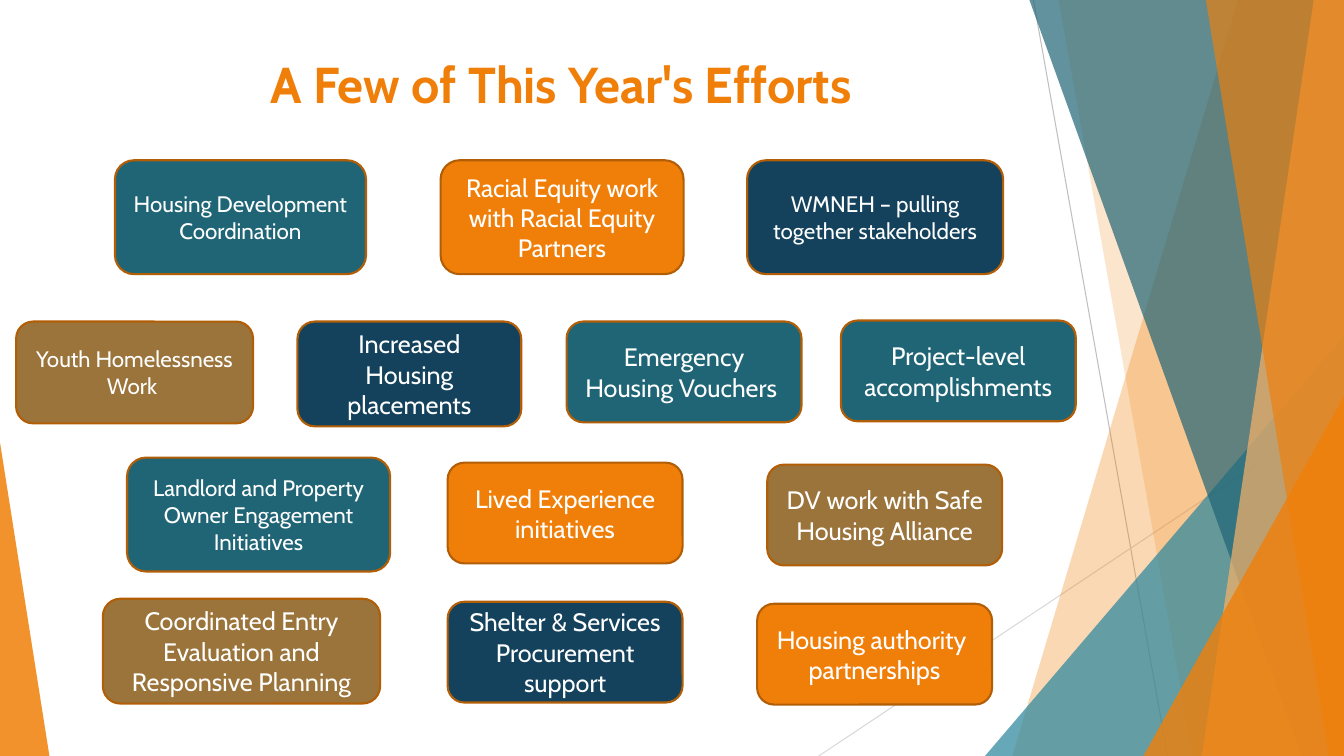
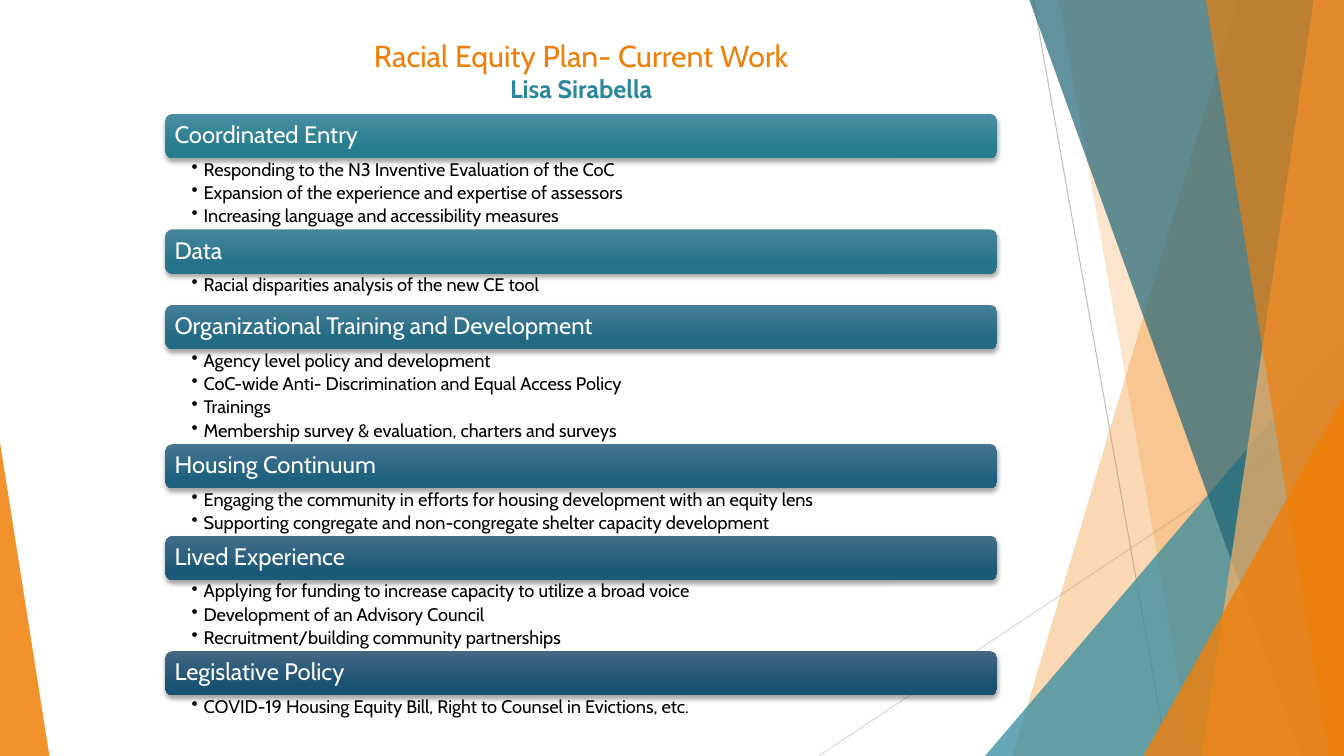
import pptx
import pptx.dml.color
import pptx.enum.shapes
import pptx.enum.text
import pptx.oxml
import pptx.oxml.ns
import pptx.util

Inches = pptx.util.Inches
Pt = pptx.util.Pt
SHAPE = pptx.enum.shapes.MSO_SHAPE
ANCHOR = pptx.enum.text.MSO_ANCHOR
ALIGN = pptx.enum.text.PP_ALIGN

WIDTH, HEIGHT = 13.33, 7.5
ORANGE, TEAL, DEEP_TEAL = "F07F09", "2B879D", "206576"
NAVY, BROWN, PEACH, RUST = "14425D", "9A743A", "F9B268", "B25E07"
WHITE, BLACK = "FFFFFF", "000000"


def rgb(value):
    return pptx.dml.color.RGBColor.from_string(value)


def xml(tag, attributes="", inner=""):
    namespace = pptx.oxml.ns.nsdecls("a")
    return pptx.oxml.parse_xml(f"<a:{tag} {namespace} {attributes}>{inner}</a:{tag}>")


class Deck:
    font = "Cabin"

    def __init__(self):
        self.presentation = pptx.Presentation()
        self.presentation.slide_width = Inches(WIDTH)
        self.presentation.slide_height = Inches(HEIGHT)
        self.slide = None

    def new_slide(self):
        self.slide = self.presentation.slides.add_slide(self.presentation.slide_layouts[6])
        self.line((10.25, 0), (11.58, HEIGHT), "BFBFBF")
        self.line((WIDTH, 4.03), (8.12, HEIGHT), "D9D9D9")
        self.band(12.28, 10.04, ORANGE, 30)
        self.band(10.5, 11.83, ORANGE, 20)
        self.wedge(9.77, 3.33, 3.56, 1, TEAL, 72)
        self.band(10.21, 12.91, DEEP_TEAL, 70)
        self.band(13.03, 11.92, PEACH, 70)
        self.band(11.96, 13.18, ORANGE, 65)
        self.wedge(11.34, 3.93, 1.99, 1, ORANGE, 80)
        self.wedge(0, 4.39, 0.49, 0, ORANGE, 85)

    def line(self, start, end, color):
        ray = self.slide.shapes.add_connector(
            pptx.enum.shapes.MSO_CONNECTOR.STRAIGHT, *map(Inches, start + end))
        ray.line.color.rgb = rgb(color)
        ray.line.width = Pt(0.75)
        ray._element.spPr.append(xml("effectLst"))

    def tint(self, shape, color, opacity):
        shape.shadow.inherit = False
        shape.fill.solid()
        shape.fill.fore_color.rgb = rgb(color)
        shape.line.fill.background()
        swatch = shape._element.spPr.find(".//" + pptx.oxml.ns.qn("a:srgbClr"))
        swatch.append(xml("alpha", f'val="{opacity * 1000}"'))

    def band(self, top_x, bottom_x, color, opacity):
        outline = self.slide.shapes.build_freeform(Inches(top_x), 0)
        corners = [(WIDTH, 0), (WIDTH, HEIGHT), (bottom_x, HEIGHT)]
        outline.add_line_segments([(Inches(x), Inches(y)) for x, y in corners])
        self.tint(outline.convert_to_shape(), color, opacity)

    def wedge(self, left, top, width, apex, color, opacity):
        wedge = self.slide.shapes.add_shape(
            SHAPE.ISOSCELES_TRIANGLE, *map(Inches, (left, top, width, HEIGHT - top)))
        wedge.adjustments[0] = apex
        self.tint(wedge, color, opacity)

    def add_text(self, paragraph, text, size, color, bold=False):
        run = paragraph.add_run()
        run.text = text
        run.font.name = self.font
        run.font.size = Pt(size)
        run.font.bold = bold
        run.font.color.rgb = rgb(color)

    def frame(self, shape, anchor, margins=(0.1, 0.05, 0.1, 0.05)):
        frame = shape.text_frame
        frame.word_wrap = True
        frame.vertical_anchor = anchor
        (frame.margin_left, frame.margin_top,
         frame.margin_right, frame.margin_bottom) = map(Inches, margins)
        return frame

    def title(self, box, lines, anchor):
        heading = self.slide.shapes.add_textbox(*map(Inches, box))
        paragraph = self.frame(heading, anchor).paragraphs[0]
        paragraph.alignment = ALIGN.CENTER
        for index, line in enumerate(lines):
            if index:
                paragraph.add_line_break()
            self.add_text(paragraph, *line)

    def rounded(self, box):
        return self.slide.shapes.add_shape(SHAPE.ROUNDED_RECTANGLE, *map(Inches, box))

    def card(self, box, text, color, size=18):
        card = self.rounded(box)
        card.shadow.inherit = False
        card.fill.solid()
        card.fill.fore_color.rgb = rgb(color)
        card.line.color.rgb = rgb(RUST)
        card.line.width = Pt(1.5)
        frame = self.frame(card, ANCHOR.MIDDLE)
        for index, line in enumerate(text.split("\n")):
            paragraph = frame.add_paragraph() if index else frame.paragraphs[0]
            paragraph.alignment = ALIGN.CENTER
            self.add_text(paragraph, line, size, WHITE)

    def bar(self, box, text, colors):
        bar = self.rounded(box)
        bar.fill.gradient()
        bar.fill.gradient_angle = 270
        for stop, position, color in zip(bar.fill.gradient_stops, (0, 0.78), colors):
            stop.position = position
            stop.color.rgb = rgb(color)
        bar.line.fill.background()
        shade = f'<a:srgbClr val="{BLACK}"><a:alpha val="35000"/></a:srgbClr>'
        shadow = (f'<a:outerShdw blurRad="{Pt(3)}" dist="{Pt(2)}" dir="5400000" '
                  f'rotWithShape="0">{shade}</a:outerShdw>')
        bar._element.spPr.append(xml("effectLst", inner=shadow))
        paragraph = self.frame(bar, ANCHOR.MIDDLE, (0.07,) * 4).paragraphs[0]
        paragraph.alignment = ALIGN.LEFT
        paragraph.line_spacing = 0.9
        self.add_text(paragraph, text, 17, WHITE)

    def bullets(self, box, items):
        listing = self.slide.shapes.add_textbox(*map(Inches, box))
        frame = self.frame(listing, ANCHOR.TOP, (0.26, 0.02, 0.13, 0.02))
        for index, item in enumerate(items):
            paragraph = frame.add_paragraph() if index else frame.paragraphs[0]
            properties = paragraph._p.get_or_add_pPr()
            properties.set("marL", str(Inches(0.12)))
            properties.set("indent", str(-Inches(0.12)))
            properties.append(xml("buChar", 'char="•"'))
            paragraph.line_spacing = 0.9
            paragraph.space_after = Pt(2.6)
            self.add_text(paragraph, item, 13, BLACK)


EFFORTS = [
    ((1.14, 1.59, 2.49, 1.13), "Housing Development Coordination", DEEP_TEAL, 16),
    ((4.37, 1.59, 2.41, 1.13), "Racial Equity work with Racial Equity Partners", ORANGE),
    ((7.41, 1.59, 2.54, 1.13), "WMNEH – pulling together stakeholders", NAVY, 16),
    ((0.16, 3.19, 2.35, 1.01), "Youth Homelessness Work ", BROWN, 16),
    ((2.95, 3.19, 2.22, 1.04), "Increased Housing placements", NAVY),
    ((5.62, 3.19, 2.33, 1), "Emergency Housing Vouchers ", DEEP_TEAL),
    ((8.34, 3.18, 2.33, 1), "Project-level accomplishments", DEEP_TEAL),
    ((1.26, 4.54, 2.61, 1.13),
     "Landlord and Property Owner Engagement Initiatives", DEEP_TEAL, 16),
    ((4.44, 4.59, 2.33, 1), "Lived Experience initiatives", ORANGE),
    ((7.61, 4.61, 2.33, 1), "DV work with Safe Housing Alliance", BROWN),
    ((1.02, 5.94, 2.75, 1.04),
     "Coordinated Entry Evaluation and Responsive Planning", BROWN),
    ((4.44, 5.97, 2.33, 1), "Shelter & Services Procurement support", NAVY),
    ((7.51, 5.99, 2.33, 1), "Housing authority \npartnerships", ORANGE),
]

EQUITY_PLAN = [
    ("Coordinated Entry", ("498FA2", "277C90"), [
        "Responding to the N3 Inventive Evaluation of the CoC",
        "Expansion of the experience and expertise of assessors",
        "Increasing language and accessibility measures"]),
    ("Data", ("47869D", "24738A"), [
        "Racial disparities analysis of the new CE tool"]),
    ("Organizational Training and Development", ("467E97", "216A84"), [
        "Agency level policy and development",
        "CoC-wide Anti- Discrimination and Equal Access Policy",
        "Trainings",
        "Membership survey & evaluation, charters and surveys"]),
    ("Housing Continuum", ("457591", "1E617E"), [
        "Engaging the community in efforts for housing development with an equity lens",
        "Supporting congregate and non-congregate shelter capacity development"]),
    ("Lived Experience", ("436E8B", "1B5978"), [
        "Applying for funding to increase capacity to utilize a broad voice",
        "Development of an Advisory Council",
        "Recruitment/building community partnerships"]),
    ("Legislative Policy", ("436785", "195171"), [
        "COVID-19 Housing Equity Bill, Right to Counsel in Evictions, etc."]),
]


def efforts_slide(deck):
    deck.new_slide()
    deck.title((0.92, 0.48, 9.4, 0.77),
               [("A Few of This Year's Efforts ", 36, ORANGE, True)], ANCHOR.TOP)
    for effort in EFFORTS:
        deck.card(*effort)


def equity_slide(deck):
    deck.new_slide()
    deck.title((3.15, 0.41, 5.23, 0.58),
               [("Racial Equity Plan- Current Work", 21.6, ORANGE),
                ("Lisa Sirabella", 18, TEAL, True)], ANCHOR.MIDDLE)
    left, top, width, bar_height = 1.64, 1.13, 8.25, 0.44
    for topic, colors, actions in EQUITY_PLAN:
        deck.bar((left, top, width, bar_height), topic, colors)
        top += bar_height
        list_height = max(0.31, 0.47 * len(actions) / 2)
        deck.bullets((left, top, width, list_height), actions)
        top += list_height


def main():
    deck = Deck()
    efforts_slide(deck)
    equity_slide(deck)
    deck.presentation.save("out.pptx")


if __name__ == "__main__":
    main()
